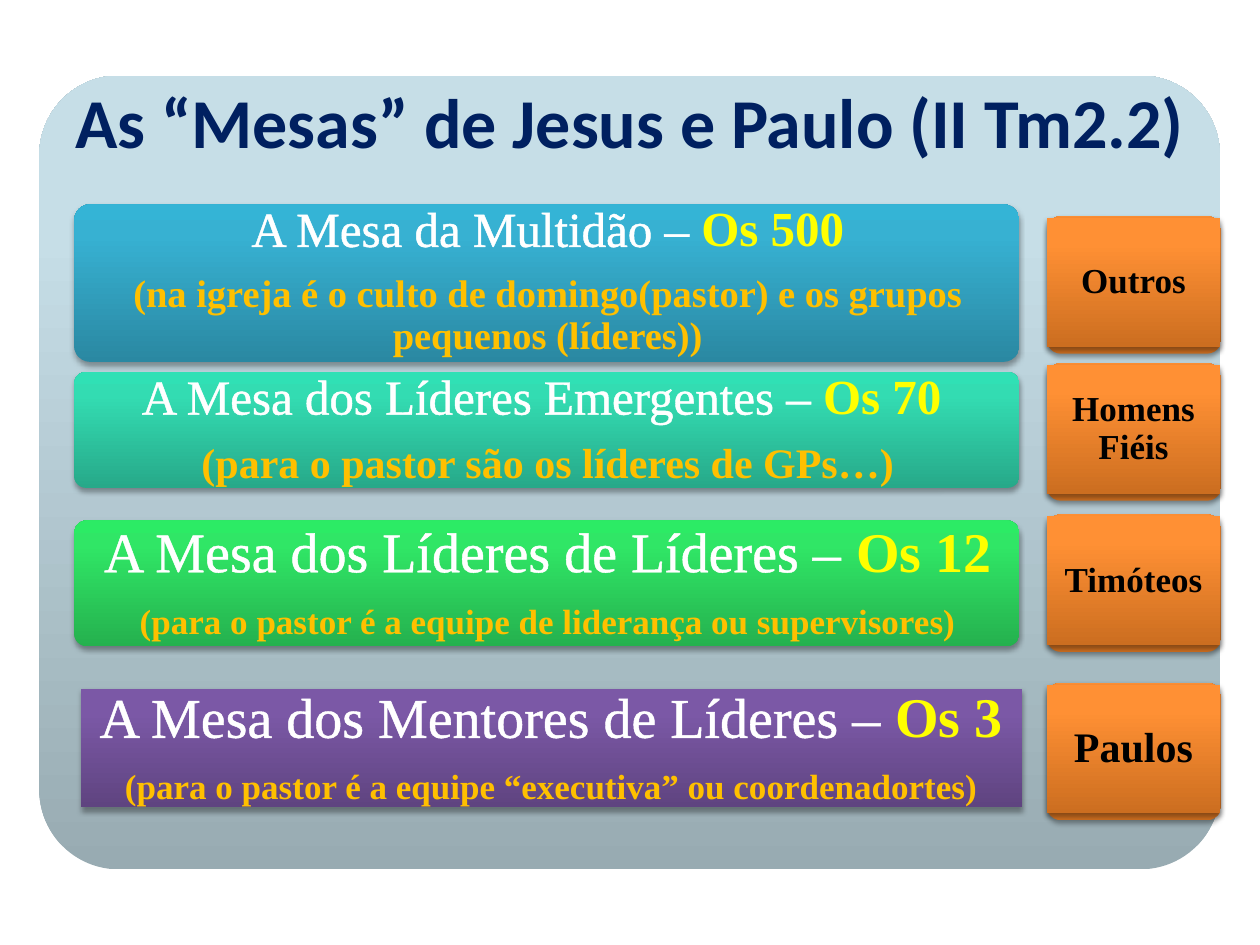
from copy import deepcopy

from lxml import etree
from pptx import Presentation
from pptx.dml.color import RGBColor
from pptx.enum import shapes as es, text as et
from pptx.oxml.ns import qn
from pptx.util import Pt

NAVY = RGBColor(0x00, 0x20, 0x60)
WHITE = RGBColor(0xFF, 0xFF, 0xFF)
BLACK = RGBColor(0x00, 0x00, 0x00)
YELLOW = RGBColor(0xFF, 0xFF, 0x00)
GOLD = RGBColor(0xFF, 0xC0, 0x00)
GREY = [RGBColor(0x98, 0xAB, 0xB2), RGBColor(0xC6, 0xDE, 0xE7), RGBColor(0xC6, 0xDF, 0xE8)]
BLUE = [RGBColor(0x2A, 0x88, 0xA2), RGBColor(0x37, 0xB1, 0xD2), RGBColor(0x34, 0xB4, 0xD6)]
TEAL = [RGBColor(0x27, 0xA9, 0x89), RGBColor(0x33, 0xDC, 0xB2), RGBColor(0x30, 0xE0, 0xB5)]
GREEN = [RGBColor(0x25, 0xB1, 0x4E), RGBColor(0x30, 0xE6, 0x66), RGBColor(0x2C, 0xEB, 0x65)]
PURPLE = [RGBColor(0x5F, 0x44, 0x80), RGBColor(0x7B, 0x58, 0xA6), RGBColor(0x7C, 0x57, 0xA8)]
ORANGE = [RGBColor(0xCC, 0x6E, 0x20), RGBColor(0xFF, 0x90, 0x34), RGBColor(0xFF, 0x91, 0x36)]

ROUND = es.MSO_SHAPE.ROUNDED_RECTANGLE
RECT = es.MSO_SHAPE.RECTANGLE
SERIF = "Times New Roman"


def node(parent, tag, **attrs):
    """Append an XML child to a parent and return it."""
    return etree.SubElement(parent, qn(tag), {k: str(v) for k, v in attrs.items()})


def shade(shape):
    """Give a shape a soft shadow that falls straight down."""
    fx = shape._element.spPr.find(qn("a:effectLst"))
    drop = node(fx, "a:outerShdw", blurRad=Pt(3.1), dist=Pt(1.8), dir=5400000, rotWithShape=0)
    node(node(drop, "a:srgbClr", val="000000"), "a:alpha", val=35000)


def panel(slide, kind, box, hues, shadow=True):
    """Draw a borderless shape with a three-stop upward gradient."""
    shape = slide.shapes.add_shape(kind, *map(Pt, box))
    if kind == ROUND:
        shape.adjustments[0] = 0.1
    shape.line.fill.background()
    shape.fill.gradient()
    shape.fill.gradient_angle = 90
    stops = shape._element.spPr.find(qn("a:gradFill")).find(qn("a:gsLst"))
    stops.append(deepcopy(stops[-1]))
    for stop, hue, pos in zip(shape.fill.gradient_stops, hues, (0, 0.8, 1)):
        stop.color.rgb = hue
        stop.position = pos
    shape.shadow.inherit = False
    if shadow:
        shade(shape)
    return shape


def frame(shape, padx=4.2, pady=3.6):
    """Prepare a shape's text frame with wrapping, middle anchor and insets."""
    body = shape.text_frame
    body.word_wrap = True
    body.auto_size = et.MSO_AUTO_SIZE.NONE
    body.vertical_anchor = et.MSO_ANCHOR.MIDDLE
    body.margin_left = body.margin_right = Pt(padx)
    body.margin_top = body.margin_bottom = Pt(pady)
    return body


def line(body, first=False, space=0.9):
    """Return a centred paragraph with proportional space after."""
    para = body.paragraphs[0] if first else body.add_paragraph()
    para.alignment = et.PP_ALIGN.CENTER
    para.line_spacing = space
    node(node(para._p.get_or_add_pPr(), "a:spcAft"), "a:spcPct", val=35000)
    return para


def write(para, words, size=20, color=BLACK, font=SERIF, bold=True, edge=False):
    """Add a formatted run of text to a paragraph."""
    run = para.add_run()
    run.text = words
    if edge:
        rim = node(run._r.get_or_add_rPr(), "a:ln", w=Pt(1.45))
        node(node(rim, "a:solidFill"), "a:srgbClr", val=color)
    run.font.size = Pt(size)
    run.font.name = font
    run.font.bold = bold
    run.font.color.rgb = color


def label(body, name, count, size, note, small):
    """Write a table's name, its head count and the note below."""
    head = line(body, first=True)
    write(head, name, size=size, color=WHITE, bold=False, edge=True)
    write(head, count, size=size, color=YELLOW)
    write(line(body), note, size=small, color=GOLD)


def card(slide, top, high, inner, hues, *words):
    """Draw a rounded card with its text box on top."""
    panel(slide, ROUND, (42.5, top, 540, high), hues)
    box = slide.shapes.add_textbox(*map(Pt, (44, top + 1.8, 538, inner)))
    label(frame(box), *words)


def tab(slide, top, name, size):
    """Draw an orange two-layer tab with a name."""
    panel(slide, ROUND, (598.3, top, 99.4, 78.5), ORANGE)
    front = panel(slide, RECT, (598.3, top + 1.1, 98.8, 73.4), ORANGE)
    write(line(frame(front), first=True), name, size=size)


def main():
    """Build the slide and save it."""
    deck = Presentation()
    deck.slide_width, deck.slide_height = Pt(720), Pt(540)
    slide = deck.slides.add_slide(deck.slide_layouts[6])

    panel(slide, ROUND, (22.5, 43.2, 674.6, 453.6), GREY, shadow=False)
    title = slide.shapes.add_textbox(*map(Pt, (22.5, 43.2, 674.6, 51)))
    write(line(frame(title, 10.8, 10.8), first=True, space=1.0),
          "As “Mesas” de Jesus e Paulo (II Tm2.2)", size=40, color=NAVY, font="Calibri")

    card(slide, 116.8, 90, 84.2, BLUE, "A Mesa da Multidão – ", "Os 500", 28,
         "(na igreja é o culto de domingo(pastor) e os grupos pequenos (líderes))", 22)
    card(slide, 212.6, 66.2, 62.6, TEAL, "A Mesa dos Líderes Emergentes – ", "Os 70 ", 28,
         "(para o pastor são os líderes de GPs…)", 24)
    card(slide, 297.4, 72, 67.7, GREEN, "A Mesa dos Líderes de Líderes – ", "Os 12", 32,
         "(para o pastor é a equipe de liderança ou supervisores)", 20)
    base = panel(slide, RECT, (46, 393.8, 538, 67.7), PURPLE)
    label(frame(base), "A Mesa dos Mentores de Líderes – ", "Os 3", 32,
          "(para o pastor é a equipe “executiva” ou coordenadortes)", 20)

    for top, name, size in ((123.6, "Outros", 20), (207.6, "Homens Fiéis", 20),
                            (294, "Timóteos", 20), (390.2, "Paulos", 24)):
        tab(slide, top, name, size)

    deck.save("out.pptx")


if __name__ == "__main__":
    main()
